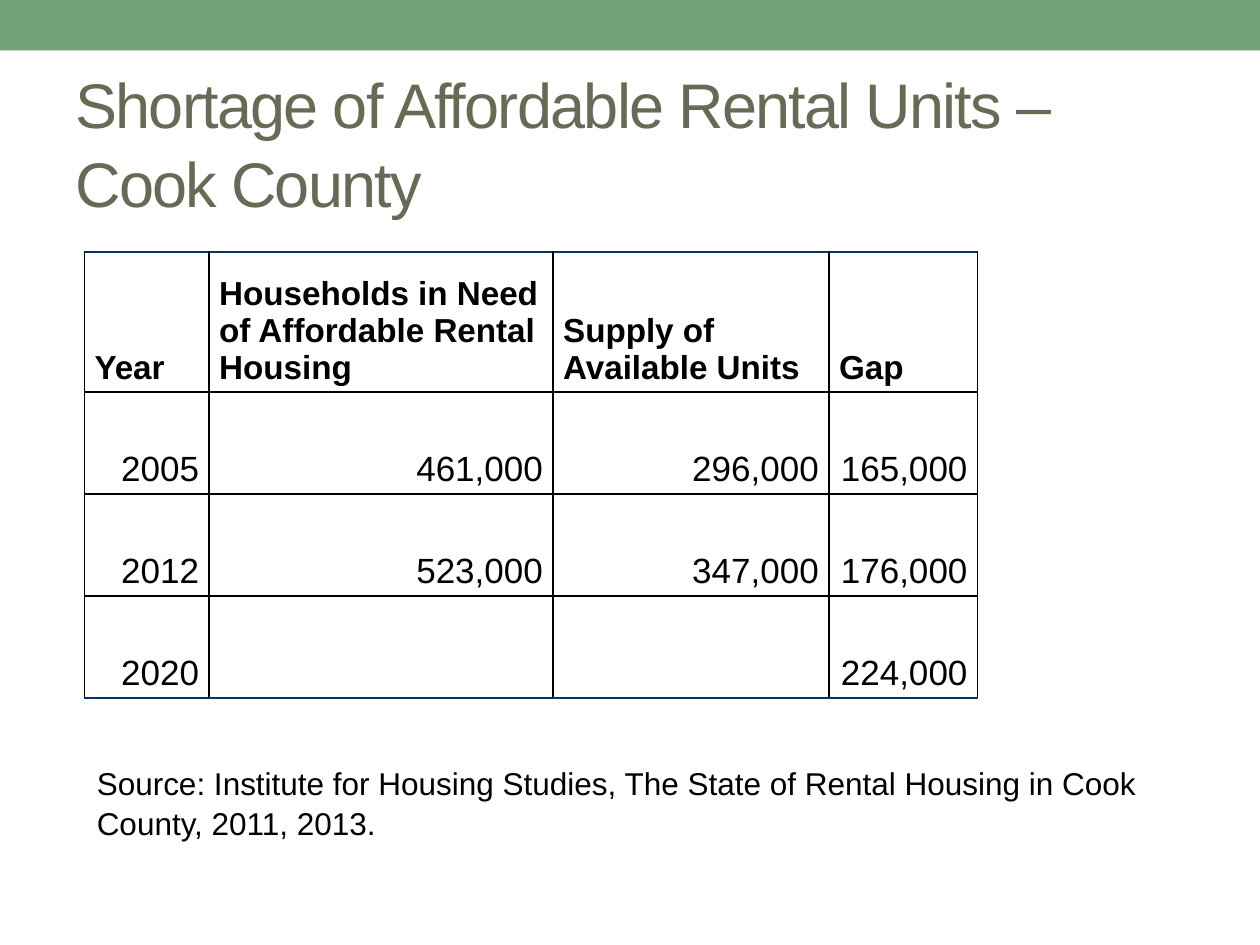
"""Build the slide on the shortage of affordable rental units in Cook County."""
from dataclasses import dataclass

from lxml.etree import SubElement
from pptx import Presentation
from pptx.dml.color import RGBColor
from pptx.enum.shapes import MSO_SHAPE
from pptx.enum.text import MSO_ANCHOR, PP_ALIGN
from pptx.oxml.ns import qn
from pptx.slide import Slide
from pptx.table import _Cell
from pptx.text.text import TextFrame
from pptx.util import Inches, Pt

GREEN = RGBColor(0x72, 0xA3, 0x76)
OLIVE = RGBColor(0x67, 0x6A, 0x55)
BLACK = RGBColor(0, 0, 0)
NAVY = RGBColor(0x00, 0x33, 0x66)
FONT = "Arial"

COLUMN_WIDTHS = (0.99, 2.73, 2.19, 1.18)
ROW_HEIGHTS = (1.11, 0.81, 0.81, 0.81)
ROWS = (
    ("Year", "Households in Need of Affordable Rental Housing", "Supply of Available Units", "Gap"),
    ("2005", "461,000", "296,000", "165,000"),
    ("2012", "523,000", "347,000", "176,000"),
    ("2020", "", "", "224,000"),
)


@dataclass(frozen=True)
class TextBlock:
    text: str
    left: float
    top: float
    width: float
    height: float
    size: float
    color: RGBColor
    anchor: MSO_ANCHOR = MSO_ANCHOR.TOP
    letter_spacing: int = 0


TEXT_BLOCKS = (
    TextBlock("Shortage of Affordable Rental Units – Cook County",
              0.5, 0.58, 9, 1.08, 36, OLIVE, MSO_ANCHOR.MIDDLE, -100),
    TextBlock("Source: Institute for Housing Studies, The State of Rental Housing in Cook County, 2011, 2013.",
              0.67, 6, 8.5, 0.72, 18, BLACK),
)


def format_text(text_frame: TextFrame, size: float, color: RGBColor, bold: bool = False) -> None:
    for paragraph in text_frame.paragraphs:
        for run in paragraph.runs:
            run.font.name = FONT
            run.font.size = Pt(size)
            run.font.bold = bold
            run.font.color.rgb = color


def add_band(slide: Slide) -> None:
    band = slide.shapes.add_shape(MSO_SHAPE.RECTANGLE, 0, 0, Inches(10), Inches(0.4))
    band.shadow.inherit = False
    band.fill.solid()
    band.fill.fore_color.rgb = GREEN
    band.line.fill.background()


def add_text(slide: Slide, block: TextBlock) -> None:
    shape = slide.shapes.add_textbox(
        Inches(block.left), Inches(block.top), Inches(block.width), Inches(block.height))
    text_frame = shape.text_frame
    text_frame.word_wrap = True
    text_frame.vertical_anchor = block.anchor
    text_frame.text = block.text
    format_text(text_frame, block.size, block.color)
    paragraph = text_frame.paragraphs[0]
    paragraph.line_spacing = 1.05
    if block.letter_spacing:
        paragraph.runs[0].font._element.set("spc", str(block.letter_spacing))


def set_borders(cell: _Cell, top: RGBColor, bottom: RGBColor) -> None:
    properties = cell._tc.get_or_add_tcPr()
    sides = (("a:lnL", BLACK), ("a:lnR", BLACK), ("a:lnT", top), ("a:lnB", bottom))
    for position, (tag, color) in enumerate(sides):
        line = SubElement(properties, qn(tag), w=str(Pt(1)))
        fill = SubElement(line, qn("a:solidFill"))
        SubElement(fill, qn("a:srgbClr"), val=str(color))
        properties.insert(position, line)


def add_housing_table(slide: Slide) -> None:
    table = slide.shapes.add_table(
        len(ROWS), len(COLUMN_WIDTHS), Inches(0.67), Inches(2),
        Inches(sum(COLUMN_WIDTHS)), Inches(sum(ROW_HEIGHTS))).table
    table.horz_banding = False
    table.first_row = False
    for column, width in zip(table.columns, COLUMN_WIDTHS):
        column.width = Inches(width)
    last = len(ROWS) - 1
    for row_index, (values, height) in enumerate(zip(ROWS, ROW_HEIGHTS)):
        table.rows[row_index].height = Inches(height)
        header = row_index == 0
        for column_index, value in enumerate(values):
            cell = table.cell(row_index, column_index)
            cell.fill.background()
            cell.vertical_anchor = MSO_ANCHOR.BOTTOM
            cell.margin_left = cell.margin_right = Inches(0.08)
            cell.margin_top = cell.margin_bottom = Inches(0.04)
            cell.text_frame.text = value
            cell.text_frame.paragraphs[0].alignment = PP_ALIGN.LEFT if header else PP_ALIGN.RIGHT
            format_text(cell.text_frame, 19 if header else 20, BLACK, header)
            set_borders(cell, NAVY if header else BLACK, NAVY if row_index == last else BLACK)


def main() -> None:
    presentation = Presentation()
    presentation.slide_width = Inches(10)
    presentation.slide_height = Inches(7.5)
    slide = presentation.slides.add_slide(presentation.slide_layouts[6])
    add_band(slide)
    add_housing_table(slide)
    for block in TEXT_BLOCKS:
        add_text(slide, block)
    presentation.save("out.pptx")


if __name__ == "__main__":
    main()
